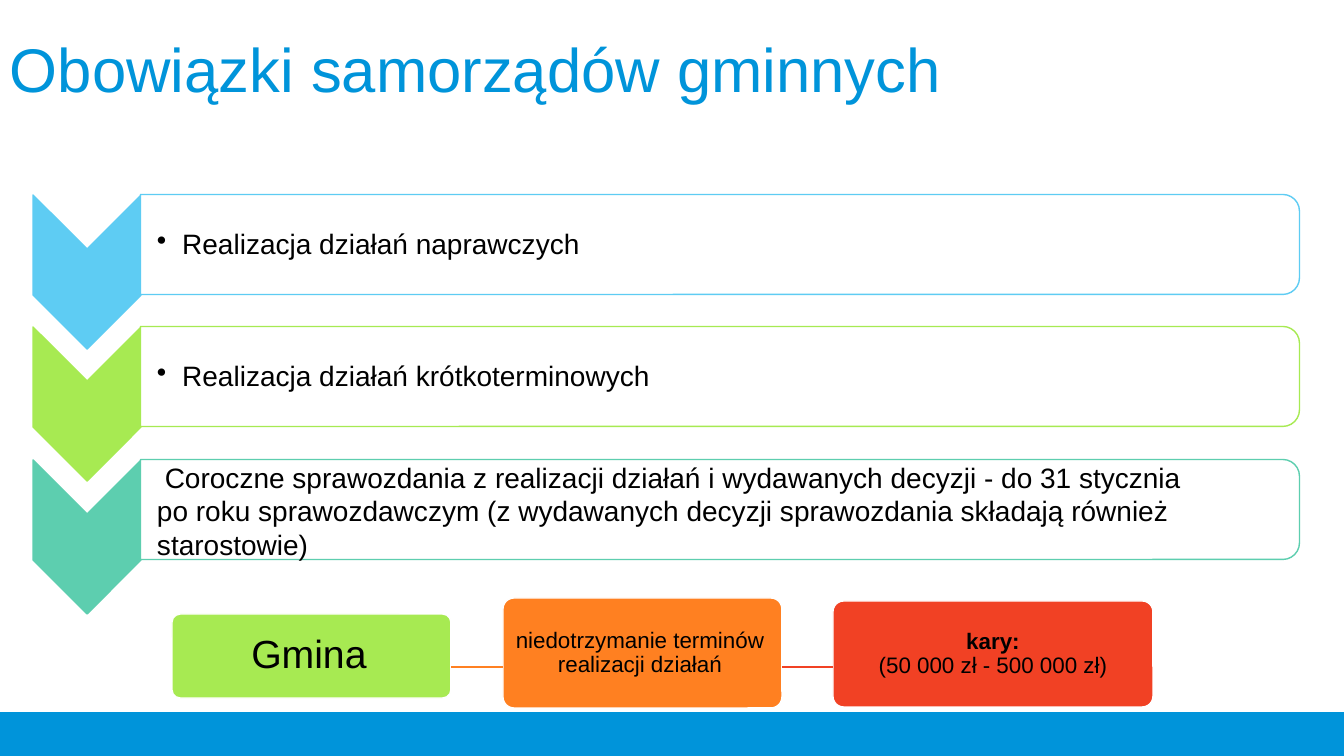
from lxml import etree
from pptx import Presentation
from pptx.dml.color import RGBColor
from pptx.enum.shapes import MSO_CONNECTOR, MSO_SHAPE
from pptx.enum.text import MSO_ANCHOR, PP_ALIGN
from pptx.oxml.ns import qn
from pptx.util import Emu, Pt

RECTANGLE = MSO_SHAPE.RECTANGLE
CHEVRON = MSO_SHAPE.CHEVRON
PANEL = MSO_SHAPE.ROUND_2_SAME_RECTANGLE
ROUNDED = MSO_SHAPE.ROUNDED_RECTANGLE
STRAIGHT = MSO_CONNECTOR.STRAIGHT
MIDDLE = MSO_ANCHOR.MIDDLE
LEFT = PP_ALIGN.LEFT
CENTER = PP_ALIGN.CENTER

FONT = "Arial"
BLUE = "0094DA"
BLACK = "000000"
WHITE = "FFFFFF"

DUTIES = [
    ("5ECCF3", ["Realizacja działań naprawczych"], True),
    ("A7EA52", ["Realizacja działań krótkoterminowych"], True),
    ("5DCEAF", [
        " Coroczne sprawozdania z realizacji działań i wydawanych decyzji - do 31 stycznia",
        "po roku sprawozdawczym (z wydawanych decyzji sprawozdania składają również starostowie)",
    ], False),
]

STEPS = [
    ((172, 614, 279, 84), "A7EA52", [("Gmina", False)], 28, 6),
    ((503, 598, 279, 110), "FF8021",
     [("niedotrzymanie terminów realizacji działań", False)], 16, 6),
    ((833, 601, 320, 106), "F14124",
     [("kary:", True), ("(50 000 zł - 500 000 zł)", False)], 16, 1),
]


def px(length):
    return Emu(round(length * 914400 / 100.8))


def rgb(code):
    return RGBColor.from_string(code)


def add_block(slide, preset, box, fill, line, rotation=0):
    block = slide.shapes.add_shape(preset, *map(px, box))
    block.shadow.inherit = False
    block.rotation = rotation
    block.fill.solid()
    block.fill.fore_color.rgb = rgb(fill)
    block.line.color.rgb = rgb(line)
    block.line.width = Pt(1)
    return block


def add_bullet(paragraph):
    properties = paragraph._p.get_or_add_pPr()
    properties.set("marL", "228600")
    properties.set("indent", "-228600")
    etree.SubElement(properties, qn("a:buChar")).set("char", "•")


def write_text(holder, lines, size, color, insets, align=LEFT, spacing=0.9, bullet=False):
    frame = holder.text_frame
    frame.word_wrap = True
    frame.vertical_anchor = MIDDLE
    (frame.margin_left, frame.margin_top,
     frame.margin_right, frame.margin_bottom) = map(px, insets)
    paragraph = frame.paragraphs[0]
    paragraph.alignment = align
    if bullet:
        add_bullet(paragraph)
    paragraph.line_spacing = spacing
    for number, (words, bold) in enumerate(lines):
        if number:
            paragraph.add_line_break()
        run = paragraph.add_run()
        run.text = words
        run.font.name = FONT
        run.font.size = Pt(size)
        run.font.bold = bold
        run.font.color.rgb = rgb(color)


def add_text(slide, box, lines, size, color, insets, **layout):
    holder = slide.shapes.add_textbox(*map(px, box))
    write_text(holder, lines, size, color, insets, **layout)


def add_duty(slide, row, color, lines, bullet):
    offset = row * 265 // 2
    add_block(slide, CHEVRON, (10, 218 + offset, 154, 108), color, color, 90)
    add_block(slide, PANEL, (670, offset - 335, 100, 1159), WHITE, color, 90)
    add_text(slide, (141, 200 + offset, 1154, 91), [(words, False) for words in lines],
             20, BLACK, (16, 1, 1, 1), spacing=0.9 if bullet else 1.0, bullet=bullet)


def add_step(slide, box, color, lines, size, right_inset):
    step = add_block(slide, ROUNDED, box, color, WHITE)
    step.adjustments[0] = 0.1
    write_text(step, lines, size, BLACK, (1, 1, right_inset, 1), align=CENTER)


def add_link(slide, start, end, color):
    link = slide.shapes.add_connector(STRAIGHT, px(start), px(667), px(end), px(667))
    link.line.color.rgb = rgb(color)
    link.line.width = Pt(1)
    etree.SubElement(link._element.spPr, qn("a:effectLst"))


def main():
    deck = Presentation()
    deck.slide_width = px(1344)
    deck.slide_height = px(756)
    slide = deck.slides.add_slide(deck.slide_layouts[6])

    add_block(slide, RECTANGLE, (0, 713, 1344, 43), BLUE, BLUE)
    add_text(slide, (0, 0, 1031, 146), [("Obowiązki samorządów gminnych", False)],
             44, BLUE, (10, 5, 10, 5))
    for row, duty in enumerate(DUTIES):
        add_duty(slide, row, *duty)
    for step in STEPS:
        add_step(slide, *step)
    for (before, *_), (after, color, *_) in zip(STEPS, STEPS[1:]):
        add_link(slide, before[0] + before[2], after[0], color)

    deck.save("out.pptx")


if __name__ == "__main__":
    main()
